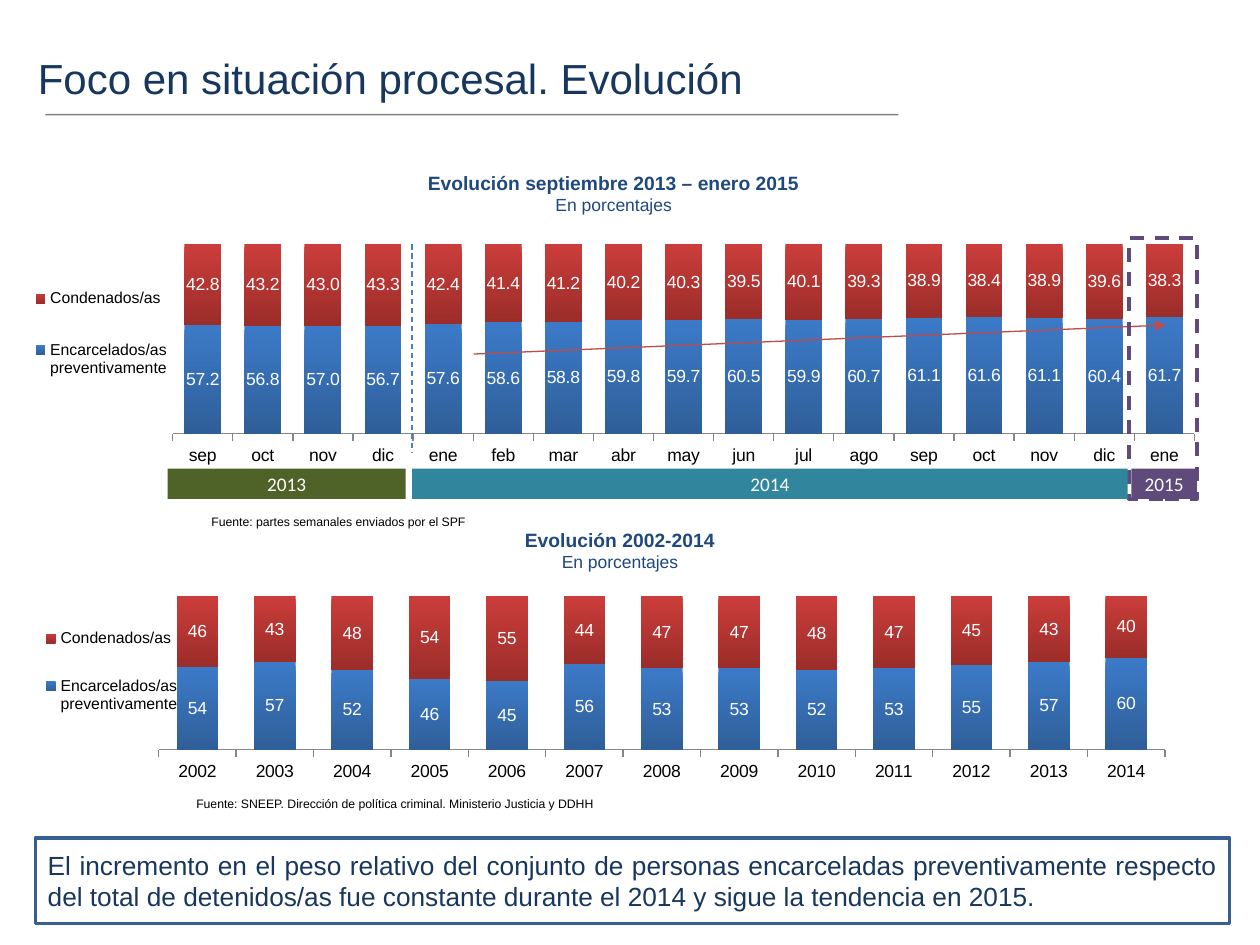
from lxml.etree import SubElement
from pptx import Presentation
from pptx.chart.data import CategoryChartData
from pptx.dml.color import RGBColor
from pptx.enum.chart import XL_CHART_TYPE, XL_LEGEND_POSITION, XL_TICK_LABEL_POSITION, XL_TICK_MARK
from pptx.enum.dml import MSO_LINE
from pptx.enum.shapes import MSO_CONNECTOR, MSO_SHAPE
from pptx.enum.text import MSO_ANCHOR, PP_ALIGN
from pptx.oxml import parse_xml
from pptx.oxml.ns import nsdecls, qn
from pptx.util import Inches, Pt

# Content
TITLE = "Foco en situación procesal. Evolución"
CONCLUSION = ("El incremento en el peso relativo del conjunto de personas encarceladas "
              "preventivamente respecto del total de detenidos/as fue constante durante "
              "el 2014 y sigue la tendencia en 2015.")
HEADINGS = [
    ("Evolución septiembre 2013 – enero 2015", (3.07, 1.31, 3.6, 0.45)),
    ("Evolución 2002-2014", (3.66, 4.14, 2.52, 0.45)),
]
UNIT = "En porcentajes"
SOURCES = [
    ("Fuente: partes semanales enviados por el SPF", (1.58, 4.03, 2.25, 0.16)),
    ("Fuente: SNEEP. Dirección de política criminal. Ministerio Justicia y DDHH",
     (1.46, 6.27, 3.44, 0.22)),
]
# Series name: gradient from top to bottom
SERIES = {"Encarcelados/as preventivamente": ("3C7AC8", "2F5F99"),
          "Condenados/as": ("CB3D3A", "9B2D2A")}
CHARTS = [
    {"box": (0.2, 1.77, 9.29, 2.04), "gap": 63, "format": "0.0",
     "plot": (0.126, 0.082, 0.873, 0.738), "legend": (0, 0.13, 0.13, 0.6),
     "categories": "sep oct nov dic ene feb mar abr may jun jul ago sep oct nov dic ene".split(),
     "values": [
         (57.2, 56.8, 57.0, 56.7, 57.6, 58.6, 58.8, 59.8, 59.7, 60.5, 59.9, 60.7, 61.1,
          61.6, 61.1, 60.4, 61.7),
         (42.8, 43.2, 43.0, 43.3, 42.4, 41.4, 41.2, 40.2, 40.3, 39.5, 40.1, 39.3, 38.9,
          38.4, 38.9, 39.6, 38.3)]},
    {"box": (0.28, 4.38, 9.33, 1.9), "gap": 86, "format": "0",
     "plot": (0.105, 0.186, 0.856, 0.641), "legend": (0, 0.2, 0.13, 0.6),
     "categories": [str(year) for year in range(2002, 2015)],
     "values": [
         (54, 57, 52, 46, 45, 56, 53, 53, 52, 53, 55, 57, 60),
         (46, 43, 48, 54, 55, 44, 47, 47, 48, 47, 45, 43, 40)]},
]
# Year, left, width, colour
YEARS = [("2013", 1.33, 1.89, "4F6228"), ("2014", 3.27, 5.68, "31859C"),
         ("2015", 8.98, 0.52, "604A7B")]
YEAR_TOP, YEAR_HEIGHT = 3.72, 0.24
NAVY, BLUE, BLACK, WHITE = "17375E", "1F497D", "000000", "FFFFFF"


def rgb(value):
    return RGBColor.from_string(value)


def inches(box):
    return [Inches(length) for length in box]


def style(font, size, color, name="Arial", bold=False):
    font.size, font.name, font.bold = Pt(size), name, bold
    font.color.rgb = rgb(color)


def write(frame, lines, align=PP_ALIGN.LEFT, wrap=True):
    """Each line is (text, size, colour, font name, bold)."""
    frame.word_wrap = wrap
    frame.text = "\n".join(line[0] for line in lines)
    for paragraph, (_, *look) in zip(frame.paragraphs, lines):
        paragraph.alignment = align
        style(paragraph.runs[0].font, *look)


def add_text(box, lines, **options):
    write(slide.shapes.add_textbox(*inches(box)).text_frame, lines, **options)


def add_line(start, end, color, dash=None):
    line = slide.shapes.add_connector(MSO_CONNECTOR.STRAIGHT, *inches(start + end))
    line.line.width = Pt(0.75)
    line.line.color.rgb = rgb(color)
    if dash:
        line.line.dash_style = dash
    SubElement(line._element.spPr, qn("a:effectLst"))
    return line.line._get_or_add_ln()


def add_box(box, fill=None, outline=None, dash=None):
    shape = slide.shapes.add_shape(MSO_SHAPE.RECTANGLE, *inches(box))
    shape.shadow.inherit = False
    if fill:
        shape.fill.solid()
        shape.fill.fore_color.rgb = rgb(fill)
    else:
        shape.fill.background()
    if outline:
        shape.line.color.rgb = rgb(outline)
        shape.line.width = Pt(2)
        if dash:
            shape.line.dash_style = dash
    else:
        shape.line.fill.background()
    return shape


def layout_xml(area, inner=False):
    target = '<c:layoutTarget val="inner"/>' if inner else ""
    modes = '<c:xMode val="edge"/><c:yMode val="edge"/>'
    sizes = "".join(f'<c:{key} val="{share}"/>' for key, share in zip("xywh", area))
    return parse_xml(f'<c:layout {nsdecls("c")}><c:manualLayout>{target}{modes}{sizes}'
                     "</c:manualLayout></c:layout>")


def place(parent, layout, after=None):
    for old in parent.findall(qn("c:layout")):
        parent.remove(old)
    if after is None:
        parent.insert(0, layout)
    else:
        parent.find(qn(after)).addnext(layout)


def add_stacked_chart(info):
    data = CategoryChartData(number_format=info["format"])
    data.categories = info["categories"]
    for name, values in zip(SERIES, info["values"]):
        data.add_series(name, values)
    chart = slide.shapes.add_chart(XL_CHART_TYPE.COLUMN_STACKED_100,
                                   *inches(info["box"]), data).chart
    style(chart.font, 10, BLACK)
    chart.has_title = False

    # Axes
    months = chart.category_axis
    months.major_tick_mark = XL_TICK_MARK.OUTSIDE
    months.tick_label_position = XL_TICK_LABEL_POSITION.LOW
    months.format.line.color.rgb = rgb("868686")
    style(months.tick_labels.font, 10, BLACK)
    share = chart.value_axis
    share.visible = share.has_major_gridlines = False
    share.minimum_scale, share.maximum_scale = 0, 1

    # Legend
    chart.has_legend = True
    legend = chart.legend
    legend.position, legend.include_in_layout = XL_LEGEND_POSITION.RIGHT, False
    style(legend.font, 9, BLACK)
    place(legend._element, layout_xml(info["legend"]), "c:legendPos")

    # Columns
    plot = chart.plots[0]
    plot.gap_width, plot.overlap, plot.vary_by_categories = info["gap"], 100, False
    place(chart._chartSpace.chart.plotArea, layout_xml(info["plot"], inner=True))
    for series, colors in zip(plot.series, SERIES.values()):
        fill = series.format.fill
        fill.gradient()
        fill.gradient_angle = 270
        for stop, color in zip(fill.gradient_stops, colors):
            stop.color.rgb = rgb(color)
        labels = series.data_labels
        labels.show_value = True
        labels.number_format, labels.number_format_is_linked = info["format"], False
        style(labels.font, 10, WHITE)


prs = Presentation()
prs.slide_width, prs.slide_height = Inches(10), Inches(7.5)
slide = prs.slides.add_slide(prs.slide_layouts[5])

# Title and rule
title = slide.shapes.title
title.left, title.top, title.width, title.height = inches((0.2, 0.37, 7.4, 0.62))
write(title.text_frame, [(TITLE, 24, NAVY)])
title.text_frame.vertical_anchor = MSO_ANCHOR.TOP
rule = add_line((0.36, 0.91), (7.13, 0.91), BLACK)
SubElement(rule.find(".//" + qn("a:srgbClr")), qn("a:alpha"), val="50000")

# Charts, headings and sources
for info in CHARTS:
    add_stacked_chart(info)
for heading, box in HEADINGS:
    add_text(box, [(heading, 11, BLUE, "Arial", True), (UNIT, 10, BLUE)],
             align=PP_ALIGN.CENTER)
for source, box in SOURCES:
    add_text(box, [(source, 7, BLACK)], wrap=False)

# Trend arrow, year divider and highlight of the last month
trend = add_line((3.76, 2.81), (9.25, 2.58), "BF4C48")
SubElement(trend, qn("a:tailEnd"), type="triangle")
add_line((3.27, 1.94), (3.27, 3.59), "4B7EBC", MSO_LINE.DASH)
add_box((8.96, 1.89, 0.54, 2.07), outline="604A7B", dash=MSO_LINE.DASH)

# Year bands
for year, left, width, color in YEARS:
    band = add_box((left, YEAR_TOP, width, YEAR_HEIGHT), fill=color)
    write(band.text_frame, [(year, 11, WHITE, "Calibri")], align=PP_ALIGN.CENTER, wrap=False)
    band.text_frame.vertical_anchor = MSO_ANCHOR.MIDDLE

# Conclusion
add_box((0.28, 6.65, 9.48, 0.68), outline="376092")
add_text((0.28, 6.69, 9.48, 0.61), [(CONCLUSION, 15, NAVY)], align=PP_ALIGN.JUSTIFY)

prs.save("out.pptx")
